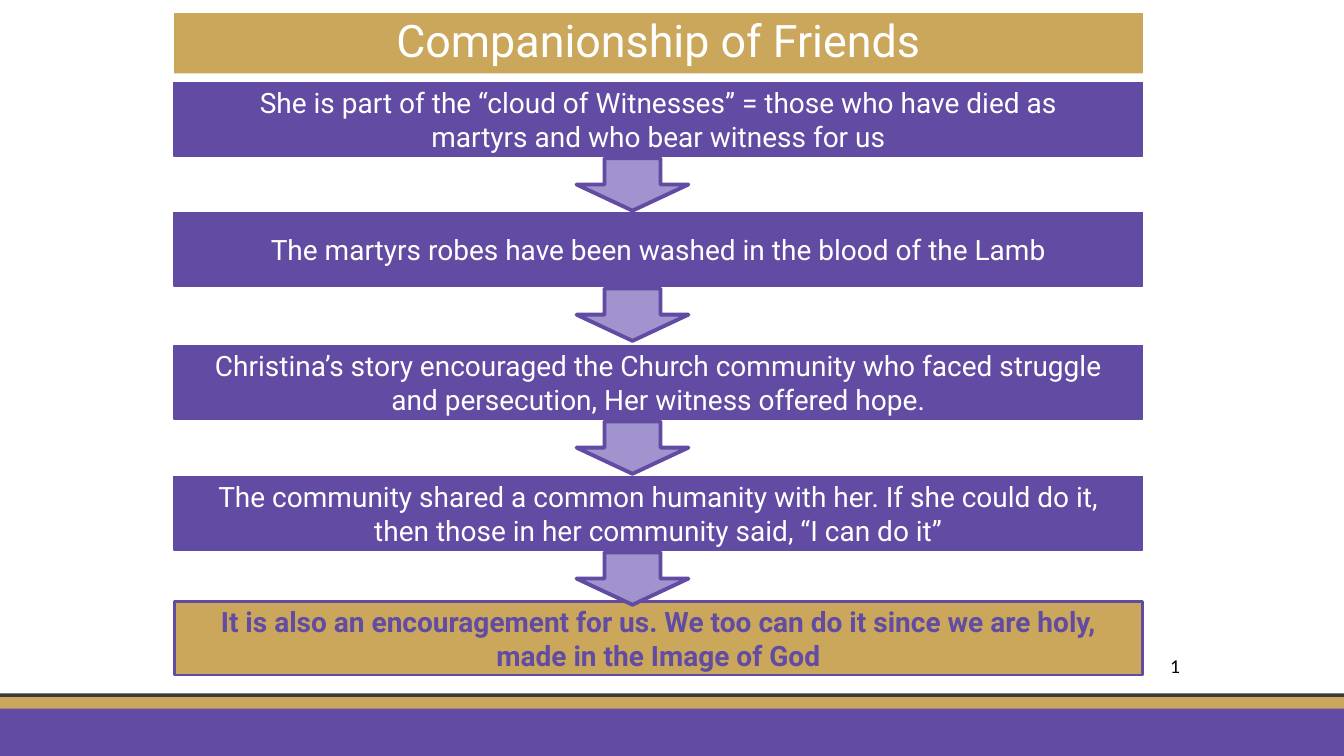
"""Build the Companionship of Friends slide with its downward chain of statements."""
from pptx import Presentation
from pptx.dml.color import RGBColor
from pptx.enum.shapes import MSO_SHAPE
from pptx.enum.text import MSO_ANCHOR, MSO_AUTO_SIZE, PP_ALIGN
from pptx.util import Cm, Pt

COLOURS = {
    "purple": "614BA3",
    "lilac": "A193CD",
    "gold": "CAA75B",
    "charcoal": "3A3A3A",
    "white": "FFFFFF",
    "black": "000000",
}


def write_text(shape, text, size, colour, font="Roboto", bold=False,
               align=PP_ALIGN.CENTER, anchor=MSO_ANCHOR.MIDDLE,
               margins=(0.25, 0.13), spacing=1.0):
    frame = shape.text_frame
    frame.word_wrap = True
    frame.auto_size = MSO_AUTO_SIZE.NONE
    frame.vertical_anchor = anchor
    frame.margin_left = frame.margin_right = Cm(margins[0])
    frame.margin_top = frame.margin_bottom = Cm(margins[1])
    paragraph = frame.paragraphs[0]
    paragraph.alignment = align
    paragraph.line_spacing = spacing
    run = paragraph.add_run()
    run.text = text
    run.font.name = font
    run.font.size = Pt(size)
    run.font.bold = bold
    run.font.color.rgb = RGBColor.from_string(COLOURS[colour])


def add_block(slide, kind, left, top, width, height, fill, line_width=0):
    shape = slide.shapes.add_shape(kind, Cm(left), Cm(top), Cm(width), Cm(height))
    shape.shadow.inherit = False
    shape.fill.solid()
    shape.fill.fore_color.rgb = RGBColor.from_string(COLOURS[fill])
    if line_width:
        shape.line.color.rgb = RGBColor.from_string(COLOURS["purple"])
        shape.line.width = Pt(line_width)
    else:
        shape.line.fill.background()
    return shape


presentation = Presentation()
presentation.slide_width = Cm(33.87)
presentation.slide_height = Cm(19.05)
slide = presentation.slides.add_slide(presentation.slide_layouts[5])

for top, height, fill in [(17.47, 0.15, "charcoal"), (17.57, 0.3, "gold"),
                          (17.86, 1.19, "purple")]:
    add_block(slide, MSO_SHAPE.RECTANGLE, 0, top, 33.87, height, fill)

box_left, box_width, box_height = 4.39, 24.41, 1.85

title = slide.shapes.title
title.left, title.top = Cm(box_left), Cm(0.33)
title.width, title.height = Cm(box_width), Cm(1.52)
title.fill.solid()
title.fill.fore_color.rgb = RGBColor.from_string(COLOURS["gold"])
write_text(title, "Companionship of Friends", 32, "white", spacing=0.9)

statements = [
    (2.08, "She is part of the “cloud of Witnesses” = those who have died as "
           "martyrs and who bear witness for us"),
    (5.36, "The martyrs robes have been washed in the blood of the Lamb"),
    (8.71, "Christina’s story encouraged the Church community who faced struggle "
           "and persecution, Her witness offered hope."),
    (12.01, "The community shared a common humanity with her. If she could do it, "
            "then those in her community said, “I can do it”"),
    (15.16, "It is also an encouragement for us. We too can do it since we are holy, "
            "made in the Image of God"),
]
conclusion_top = statements[-1][0]

for top, text in statements:
    is_conclusion = top == conclusion_top
    box = add_block(slide, MSO_SHAPE.RECTANGLE, box_left, top, box_width, box_height,
                    "gold" if is_conclusion else "purple", 2 if is_conclusion else 1)
    write_text(box, text, 20, "purple" if is_conclusion else "white",
               bold=is_conclusion, margins=(1.02, 0.25))

for top, text in statements[:-1]:
    add_block(slide, MSO_SHAPE.DOWN_ARROW, 14.53, top + box_height + 0.06,
              2.82, 1.32, "lilac", 2.75)

page_number = slide.shapes.add_textbox(Cm(29.24), Cm(16.36), Cm(2.11), Cm(0.86))
write_text(page_number, "1", 14, "black", font="Calibri",
           align=PP_ALIGN.LEFT, anchor=MSO_ANCHOR.TOP)

presentation.save("out.pptx")
